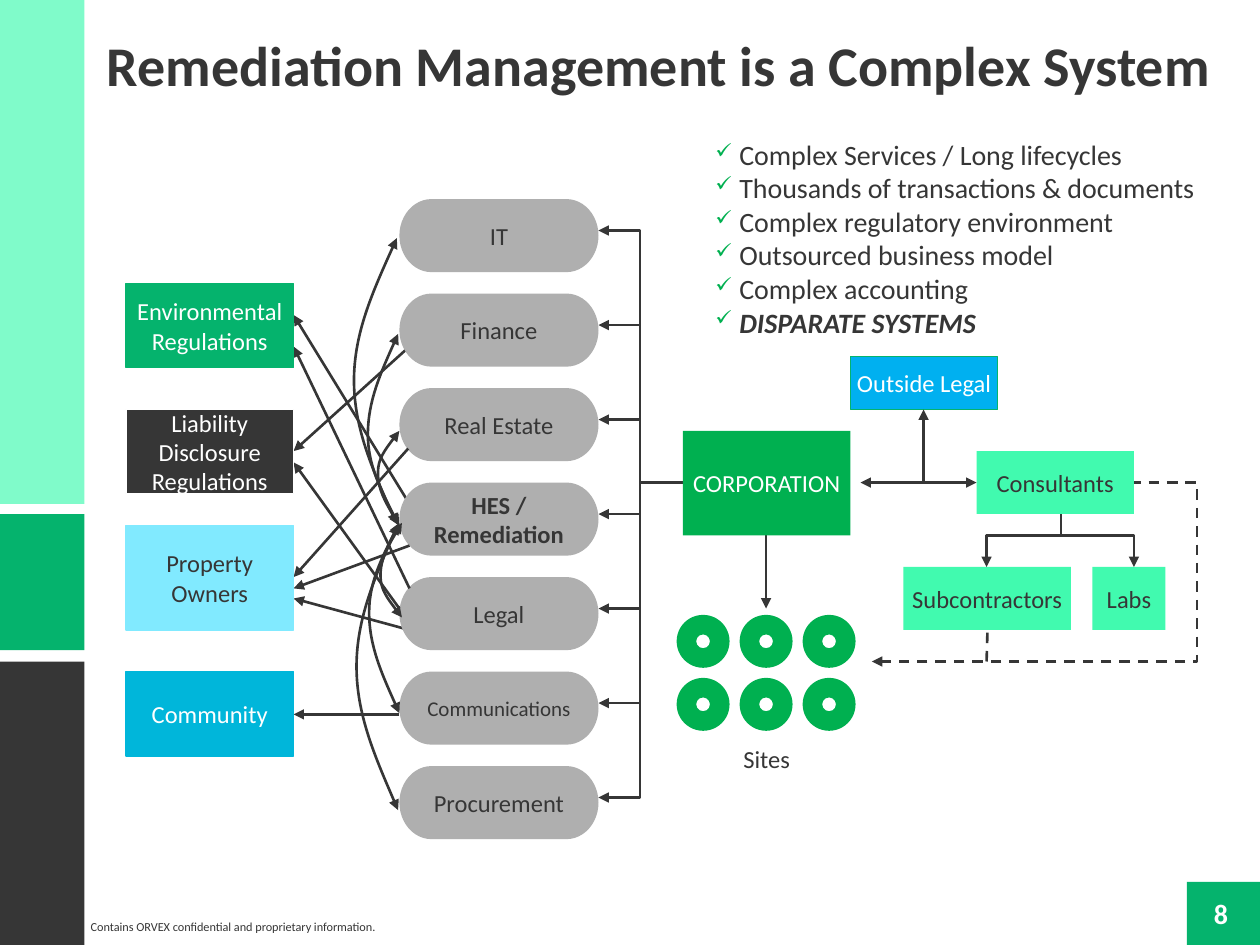
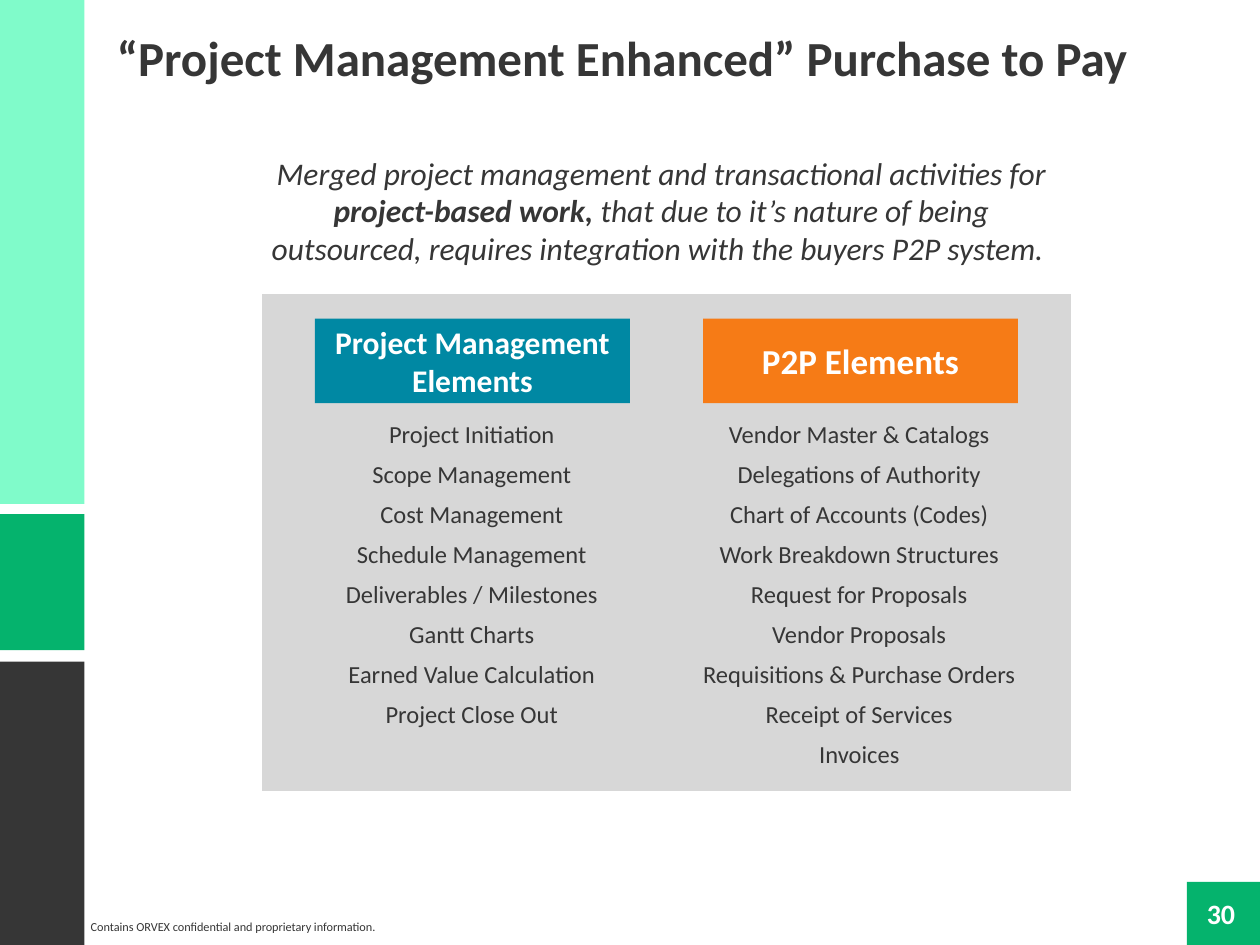
import dataclasses
import itertools
import typing

import lxml.etree
import pptx
import pptx.dml.color
import pptx.enum.dml
import pptx.enum.shapes
import pptx.enum.text
import pptx.oxml.ns
import pptx.util

Inches = pptx.util.Inches
RGBColor = pptx.dml.color.RGBColor
Kind = pptx.enum.shapes.MSO_SHAPE
Align = pptx.enum.text.PP_ALIGN
Anchor = pptx.enum.text.MSO_ANCHOR
qn = pptx.oxml.ns.qn

FONT = "Calibri"
CHARCOAL = RGBColor(0x36, 0x36, 0x36)
WHITE = RGBColor(0xFF, 0xFF, 0xFF)
GREEN = RGBColor(0x05, 0xB3, 0x6D)
MINT = RGBColor(0x80, 0xFB, 0xCA)
BRIGHT_MINT = RGBColor(0x41, 0xFA, 0xAF)
LEAF = RGBColor(0x00, 0xB0, 0x50)
SKY = RGBColor(0x00, 0xB0, 0xF0)
PALE_BLUE = RGBColor(0x81, 0xEA, 0xFF)
CYAN = RGBColor(0x00, 0xB6, 0xDA)
GRAY = RGBColor(0xAF, 0xAF, 0xAF)
PANEL_GRAY = RGBColor(0xD7, 0xD7, 0xD7)
TEAL = RGBColor(0x00, 0x88, 0xA3)
ORANGE = RGBColor(0xF6, 0x7B, 0x16)

Point = tuple[float, float]


@dataclasses.dataclass(frozen=True)
class Area:
    left: float
    top: float
    width: float
    height: float

    def lengths(self) -> list[int]:
        return [Inches(value) for value in dataclasses.astuple(self)]


@dataclasses.dataclass(frozen=True)
class Block:
    area: Area
    fill: RGBColor
    text: str = ""
    color: RGBColor = CHARCOAL
    outline: RGBColor | None = None
    kind: Kind = Kind.RECTANGLE
    size: float = 14
    bold: bool = False
    inset: float = 0
    spacing: float | None = None


@dataclasses.dataclass(frozen=True)
class Link:
    points: tuple[Point, ...]
    head: bool = False
    tail: bool = True
    dashed: bool = False


@dataclasses.dataclass(frozen=True)
class Column:
    header: Block
    area: Area
    items: tuple[str, ...]


BANDS = (
    Block(Area(9.42, 7, 0.58, 0.5), GREEN),
    Block(Area(0, 5.25, 0.67, 2.25), CHARCOAL),
    Block(Area(0, 4.08, 0.67, 1.08), GREEN),
    Block(Area(0, 0, 0.67, 4), MINT),
)

BENEFITS = (
    "Complex Services / Long lifecycles",
    "Thousands of transactions & documents",
    "Complex regulatory environment",
    "Outsourced business model",
    "Complex accounting",
    "DISPARATE SYSTEMS",
)

DEPARTMENTS = (
    "IT", "Finance", "Real Estate", "HES / Remediation",
    "Legal", "Communications", "Procurement",
)
DEPARTMENT_PITCH = 0.75

STAKEHOLDERS = (
    Block(Area(1, 2.25, 1.33, 0.67), GREEN, "Environmental Regulations", WHITE, GREEN),
    Block(Area(1, 3.25, 1.33, 0.67), CHARCOAL, "Liability Disclosure Regulations", WHITE, WHITE),
    Block(Area(1, 4.17, 1.33, 0.83), PALE_BLUE, "Property Owners", CHARCOAL, PALE_BLUE, spacing=17),
    Block(Area(1, 5.33, 1.33, 0.67), CYAN, "Community", WHITE, CYAN),
)

ORGANIZATIONS = (
    Block(Area(5.42, 3.42, 1.33, 0.83), LEAF, "CORPORATION", WHITE),
    Block(Area(6.75, 2.83, 1.17, 0.42), SKY, "Outside Legal", WHITE, GREEN),
    Block(Area(7.75, 3.58, 1.25, 0.5), BRIGHT_MINT, "Consultants"),
    Block(Area(8.67, 4.5, 0.58, 0.5), BRIGHT_MINT, "Labs"),
    Block(Area(7.17, 4.5, 1.33, 0.5), BRIGHT_MINT, "Subcontractors"),
)

LINKS_BELOW = (
    Link(((6.08, 4.08), (6.08, 4.83))),
    Link(((7.83, 5.25), (7.84, 4.92)), tail=False, dashed=True),
    Link(((8.42, 4.25), (8.42, 3.75)), tail=False),
    Link(((3.25, 5), (2.33, 4.75))),
    Link(((3.25, 4), (2.33, 2.5))),
    Link(((3.25, 2.75), (2.33, 3.58))),
    Link(((5.42, 3.83), (5.08, 3.83)), tail=False),
    Link(((8.97, 3.83), (9.5, 3.83), (9.5, 5.25), (6.92, 5.25)), dashed=True),
)

LINKS_ABOVE = (
    Link(((6.83, 3.83), (7.75, 3.83)), head=True),
    Link(((7.83, 4.5), (7.83, 4.25), (9, 4.25), (9, 4.5)), head=True),
    Link(((7.33, 3.83), (7.33, 3.25))),
    Link(((4.75, 1.83), (5.08, 1.83), (5.08, 6.33), (4.75, 6.33)), head=True),
    *(Link(((5.08, 1.83 + DEPARTMENT_PITCH * row), (4.75, 1.83 + DEPARTMENT_PITCH * row)))
      for row in range(1, 6)),
    Link(((3.25, 4.33), (2.33, 4.67))),
    Link(((3.25, 4.67), (2.33, 2.75))),
    Link(((3.24, 3.56), (2.33, 4.58))),
    Link(((3.17, 5.67), (2.33, 5.67))),
    Link(((3.17, 4.83), (2.33, 3.67))),
)

BOWS = (
    ((3.17, 4.17), (3, 3.75), (3.17, 3.42)),
    ((3.16, 4.16), (2.92, 3.45), (3.16, 2.65)),
    ((3.15, 4.16), (2.81, 3.02), (3.15, 1.89)),
    ((3.16, 4.16), (2.83, 5.29), (3.16, 6.43)),
    ((3.17, 4.15), (2.93, 4.86), (3.17, 5.66)),
    ((3.19, 4.15), (3.02, 4.57), (3.19, 4.9)),
)

COLUMNS = (
    Column(
        Block(Area(2.5, 2.53, 2.5, 0.67), TEAL, "Project Management Elements", WHITE,
              size=18, bold=True, inset=0.1),
        Area(2.58, 3.28, 2.33, 2.57),
        ("Project Initiation", "Scope Management", "Cost Management", "Schedule Management",
         "Deliverables / Milestones", "Gantt Charts", "Earned Value Calculation",
         "Project Close Out"),
    ),
    Column(
        Block(Area(5.58, 2.53, 2.5, 0.67), ORANGE, "P2P Elements", WHITE,
              size=20, bold=True, inset=0.1),
        Area(5.33, 3.28, 2.98, 2.89),
        ("Vendor Master & Catalogs", "Delegations of Authority", "Chart of Accounts (Codes)",
         "Work Breakdown Structures", "Request for Proposals", "Vendor Proposals",
         "Requisitions & Purchase Orders", "Receipt of Services", "Invoices"),
    ),
)


def add_span(para: typing.Any, text: str, *, size: float = 14, color: RGBColor = CHARCOAL,
             bold: bool = False, italic: bool = False, align: Align = Align.LEFT) -> None:
    para.alignment = align
    span = para.add_run()
    span.text = text
    span.font.name = FONT
    span.font.size = pptx.util.Pt(size)
    span.font.color.rgb = color
    span.font.bold = bold
    span.font.italic = italic


def set_frame(frame: typing.Any, inset: float) -> None:
    frame.word_wrap = True
    frame.margin_left = frame.margin_right = Inches(inset)
    frame.margin_top = frame.margin_bottom = Inches(0.05)


def add_box(page: typing.Any, area: Area, inset: float = 0.1) -> typing.Any:
    frame = page.shapes.add_textbox(*area.lengths()).text_frame
    set_frame(frame, inset)
    return frame


def add_paragraphs(frame: typing.Any, count: int) -> list[typing.Any]:
    return [frame.paragraphs[0], *(frame.add_paragraph() for _ in range(count - 1))]


def draw_block(page: typing.Any, block: Block) -> typing.Any:
    shape = page.shapes.add_shape(block.kind, *block.area.lengths())
    shape.shadow.inherit = False
    shape.fill.solid()
    shape.fill.fore_color.rgb = block.fill
    if block.outline is None:
        shape.line.fill.background()
    else:
        shape.line.color.rgb = block.outline
        shape.line.width = pptx.util.Pt(0.75)
    if block.text:
        set_frame(shape.text_frame, block.inset)
        shape.text_frame.vertical_anchor = Anchor.MIDDLE
        para = shape.text_frame.paragraphs[0]
        if block.spacing:
            para.line_spacing = pptx.util.Pt(block.spacing)
        add_span(para, block.text, size=block.size, color=block.color,
                 bold=block.bold, align=Align.CENTER)
    return shape


def draw_link(page: typing.Any, link: Link) -> typing.Any:
    points = [(Inches(x), Inches(y)) for x, y in link.points]
    straight = len(points) == 2
    if straight:
        shape = page.shapes.add_connector(
            pptx.enum.shapes.MSO_CONNECTOR.STRAIGHT, *points[0], *points[1])
    else:
        builder = page.shapes.build_freeform(*points[0])
        builder.add_line_segments(points[1:], close=False)
        shape = builder.convert_to_shape()
        shape.fill.background()
    shape.line.color.rgb = CHARCOAL
    shape.line.width = pptx.util.Pt(1.5)
    if link.dashed:
        shape.line.dash_style = pptx.enum.dml.MSO_LINE.DASH
    properties = shape.element.find(qn("p:spPr"))
    outline = properties.find(qn("a:ln"))
    for name, shown in (("a:headEnd", link.head), ("a:tailEnd", link.tail)):
        if shown:
            lxml.etree.SubElement(outline, qn(name), type="triangle")
    if straight:
        lxml.etree.SubElement(properties, qn("a:effectLst"))
    else:
        shape.shadow.inherit = False
    return shape


def draw_bow(page: typing.Any, start: Point, middle: Point, end: Point) -> None:
    (x1, y1), (x2, y2), (x3, y3) = start, middle, end
    controls = (
        start, ((x1 + x2) / 2, y1 + (y2 - y1) / 3), (x2, y1 + (y2 - y1) * 2 / 3),
        middle, (x2, y2 + (y3 - y2) / 3), ((x2 + x3) / 2, y2 + (y3 - y2) * 2 / 3), end,
    )
    shape = draw_link(page, Link(controls, head=True))
    segments = list(shape.element.iter(qn("a:lnTo")))
    outline = segments[0].getparent()
    for first in range(0, len(segments), 3):
        curve = lxml.etree.SubElement(outline, qn("a:cubicBezTo"))
        for segment in segments[first:first + 3]:
            curve.append(segment[0])
            outline.remove(segment)


def add_check(para: typing.Any) -> None:
    properties = para._p.get_or_add_pPr()
    properties.set("marL", str(Inches(0.19)))
    properties.set("indent", str(-Inches(0.19)))
    color = lxml.etree.SubElement(properties, qn("a:buClr"))
    lxml.etree.SubElement(color, qn("a:srgbClr"), val=str(LEAF))
    lxml.etree.SubElement(properties, qn("a:buSzPct"), val="75000")
    lxml.etree.SubElement(properties, qn("a:buChar"), char="✓")


def add_page(deck: typing.Any, title: str, area: Area, size: float, number: int) -> typing.Any:
    page = deck.slides.add_slide(deck.slide_layouts[6])
    for band in BANDS:
        draw_block(page, band)
    footer = add_box(page, Area(0.72, 7.25, 2.45, 0.22), 0)
    add_span(footer.paragraphs[0], "Contains ORVEX confidential and proprietary information.", size=7)
    counter = add_box(page, Area(9.42, 7.07, 0.54, 0.37), 0)
    add_span(counter.paragraphs[0], str(number), size=16, color=WHITE, bold=True, align=Align.CENTER)
    add_span(add_box(page, area).paragraphs[0], title, size=size, bold=True)
    return page


def build_system(deck: typing.Any) -> None:
    page = add_page(deck, "Remediation Management is a Complex System",
                    Area(0.75, 0.19, 9.08, 0.64), 32, 8)
    benefits = add_box(page, Area(5.58, 1.04, 4.17, 1.72))
    for para, text in zip(add_paragraphs(benefits, len(BENEFITS)), BENEFITS):
        add_check(para)
        strong = text == BENEFITS[-1]
        add_span(para, text, size=16, bold=strong, italic=strong)
    for link in LINKS_BELOW:
        draw_link(page, link)
    for row, name in enumerate(DEPARTMENTS):
        draw_block(page, Block(
            Area(3.17, 1.58 + DEPARTMENT_PITCH * row, 1.58, 0.58), GRAY, name,
            kind=Kind.FLOWCHART_TERMINATOR, size=12 if name == "Communications" else 14,
            bold=name.startswith("HES")))
    for block in ORGANIZATIONS:
        draw_block(page, block)
    for link in LINKS_ABOVE:
        draw_link(page, link)
    for bow in BOWS:
        draw_bow(page, *bow)
    for block in STAKEHOLDERS:
        draw_block(page, block)
    for row, column in itertools.product(range(2), range(3)):
        area = Area(5.37 + 0.5 * column, 4.88 + 0.5 * row, 0.42, 0.42)
        draw_block(page, Block(area, LEAF, kind=Kind.DONUT)).adjustments[0] = 0.37
    sites = add_box(page, Area(5.75, 5.86, 0.67, 0.34))
    add_span(sites.paragraphs[0], "Sites", align=Align.CENTER)


def build_purchase(deck: typing.Any) -> None:
    page = add_page(deck, "“Project Management Enhanced” Purchase to Pay",
                    Area(0.83, 0.17, 9, 0.57), 28, 30)
    summary = add_box(page, Area(2, 1.17, 6.5, 1.01)).paragraphs[0]
    for text, bold in (
        ("Merged project management and transactional activities for ", False),
        ("project-based work,", True),
        (" that due to it’s nature of being outsourced, requires integration"
         " with the buyers P2P system. ", False),
    ):
        add_span(summary, text, size=18, bold=bold, italic=True, align=Align.CENTER)
    draw_block(page, Block(Area(2.08, 2.33, 6.42, 3.95), PANEL_GRAY, kind=Kind.FLOWCHART_PROCESS))
    for column in COLUMNS:
        draw_block(page, column.header)
        frame = add_box(page, column.area)
        for para, text in zip(add_paragraphs(frame, len(column.items)), column.items):
            para.space_after = pptx.util.Pt(6)
            add_span(para, text, align=Align.CENTER)


def main() -> None:
    deck = pptx.Presentation()
    deck.slide_width = Inches(10)
    deck.slide_height = Inches(7.5)
    build_system(deck)
    build_purchase(deck)
    deck.save("out.pptx")


if __name__ == "__main__":
    main()
